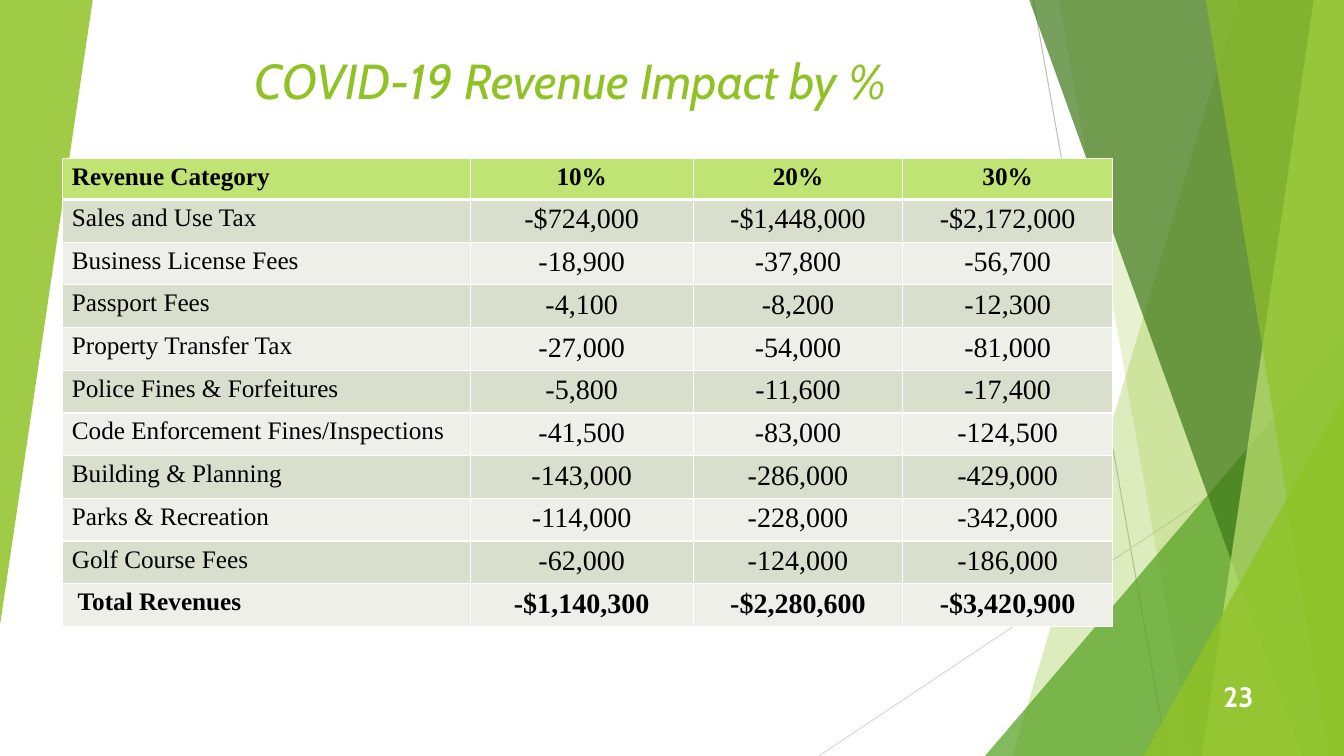
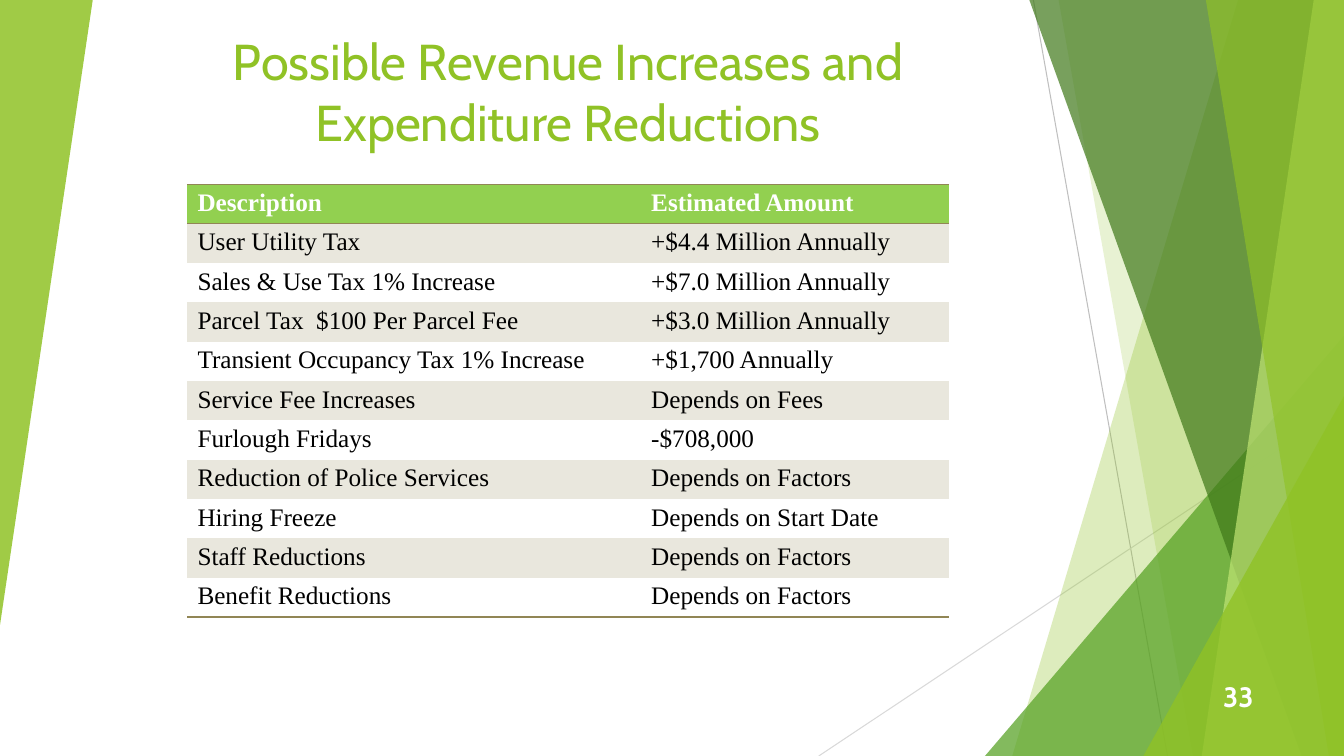
"""Two budget slides: a green faceted backdrop, a centred title, a table and a page number."""
from dataclasses import dataclass
from typing import Callable, Optional

from lxml import etree
from pptx import Presentation
from pptx import util as u
from pptx.dml.color import RGBColor
from pptx.enum import shapes, text
from pptx.oxml import ns

WIDTH, HEIGHT = u.Inches(13.33), u.Inches(7.5)
TITLE_FONT, TABLE_FONT = "Cabin", "Times New Roman"
PLAIN_TABLE = "{2D5ABB26-0587-4C30-8999-92F81FD0307C}"
COLORS = {
    "white": "FFFFFF", "black": "000000", "silver": "BFBFBF", "mist": "D9D9D9",
    "green": "90C226", "leaf": "54A021", "forest": "3F7819", "lime": "C0E474",
    "sage": "D9DECD", "pale": "EDEFE8", "grass": "92D050", "olive": "918655",
    "sand": "E9E7DD",
}


@dataclass(frozen=True)
class Area:
    """A rectangle in percent of the slide's width and height."""
    left: float
    top: float
    width: float
    height: float


@dataclass(frozen=True)
class Ray:
    """A thin straight line across the backdrop."""
    start: tuple[float, float]
    end: tuple[float, float]
    color: str


@dataclass(frozen=True)
class Blade:
    """A full-height panel from a slanted left edge to the right side."""
    top: float
    foot: float
    color: str
    opacity: int


@dataclass(frozen=True)
class Corner:
    """A right triangle tucked into a corner of the slide."""
    area: Area
    color: str
    opacity: int
    rotation: int = 0


@dataclass(frozen=True)
class Style:
    """The look of one run of text."""
    size: float
    color: str
    font: str = TABLE_FONT
    bold: bool = False
    italic: bool = False


@dataclass(frozen=True)
class TableLook:
    """Colours, rules and figure style of a table."""
    header_fill: str
    header_color: str
    bands: tuple[str, Optional[str]]
    rule_color: str
    rules: Callable[[int, int], dict[str, float]]
    inset: float
    figure_size: int = 18
    figure_align: text.PP_ALIGN = text.PP_ALIGN.LEFT
    total_row: bool = False


@dataclass(frozen=True)
class Page:
    """The content of one slide."""
    title: list[str]
    title_area: Area
    title_style: Style
    number: str
    table_corner: tuple[float, float]
    columns: list[float]
    row_height: float
    look: TableLook
    rows: list[list[str]]


def grid_rules(row: int, last: int) -> dict[str, float]:
    """Rule every edge, with a heavy line under the header."""
    return {"L": 1, "R": 1, "T": 3 if row == 1 else 1, "B": 3 if row == 0 else 1}


def open_rules(row: int, last: int) -> dict[str, float]:
    """Rule only around the header and below the last row."""
    return {0: {"T": 1, "B": 1}, last: {"B": 1}}.get(row, {})


BACKDROP = [
    Ray((76.89, 0), (86.87, 100), "silver"),
    Ray((100, 53.73), (60.92, 100), "mist"),
    Blade(92.12, 75.32, "green", 30),
    Blade(78.77, 88.75, "green", 20),
    Corner(Area(73.29, 44.4, 26.71, 55.6), "leaf", 72),
    Blade(76.59, 96.85, "forest", 70),
    Blade(97.75, 89.42, "lime", 70),
    Blade(89.72, 98.87, "green", 65),
    Corner(Area(85.07, 52.4, 14.93, 47.6), "green", 80),
    Corner(Area(0, 0, 6.9, 82.67), "green", 85, 180),
]
NUMBER_AREA = Area(88.37, 89.47, 5.63, 5.33)
NUMBER_STYLE = Style(20, "white", TITLE_FONT, bold=True)

PAGES = [
    Page(
        ["COVID-19 Revenue Impact by %"], Area(7.43, 0.53, 70.07, 14.53),
        Style(35.1, "green", TITLE_FONT, italic=True), "23",
        (4.65, 20.93), [30.34, 16.59, 15.6, 15.6], 5.45,
        TableLook("lime", "black", ("sage", "pale"), "white", grid_rules, 0.7,
                  20, text.PP_ALIGN.CENTER, True),
        [
            ["Revenue Category", "10%", "20%", "30%"],
            ["Sales and Use Tax", "-$724,000", "-$1,448,000", "-$2,172,000"],
            ["Business License Fees", "-18,900", "-37,800", "-56,700"],
            ["Passport Fees", "-4,100", "-8,200", "-12,300"],
            ["Property Transfer Tax", "-27,000", "-54,000", "-81,000"],
            ["Police Fines & Forfeitures", "-5,800", "-11,600", "-17,400"],
            ["Code Enforcement Fines/Inspections", "-41,500", "-83,000", "-124,500"],
            ["Building & Planning", "-143,000", "-286,000", "-429,000"],
            ["Parks & Recreation", "-114,000", "-228,000", "-342,000"],
            ["Golf Course Fees", "-62,000", "-124,000", "-186,000"],
            [" Total Revenues", "-$1,140,300", "-$2,280,600", "-$3,420,900"],
        ],
    ),
    Page(
        ["Possible Revenue Increases and", "Expenditure Reductions"],
        Area(5.7, 6.53, 73.14, 14.13), Style(36, "green", TITLE_FONT), "33",
        (13.95, 24.4), [33.76, 22.88], 5.04,
        TableLook("grass", "white", ("sand", None), "olive", open_rules, 0.75),
        [
            ["Description", "Estimated Amount"],
            ["User Utility Tax", "+$4.4 Million Annually"],
            ["Sales & Use Tax 1% Increase", "+$7.0 Million Annually"],
            ["Parcel Tax  $100 Per Parcel Fee", "+$3.0 Million Annually"],
            ["Transient Occupancy Tax 1% Increase", "+$1,700 Annually"],
            ["Service Fee Increases", "Depends on Fees"],
            ["Furlough Fridays", "-$708,000"],
            ["Reduction of Police Services", "Depends on Factors"],
            ["Hiring Freeze", "Depends on Start Date"],
            ["Staff Reductions", "Depends on Factors"],
            ["Benefit Reductions", "Depends on Factors"],
        ],
    ),
]


def across(share: float) -> int:
    """Turn a percentage of the slide's width into a length."""
    return round(WIDTH * share / 100)


def down(share: float) -> int:
    """Turn a percentage of the slide's height into a length."""
    return round(HEIGHT * share / 100)


def place(area: Area) -> tuple[int, int, int, int]:
    """Give an area as left, top, width and height."""
    return across(area.left), down(area.top), across(area.width), down(area.height)


def rgb(name: str) -> RGBColor:
    """Look up a named colour."""
    return RGBColor.from_string(COLORS[name])


def paint(shape, color: str, opacity: int) -> None:
    """Give a shape a see-through fill without line or shadow."""
    shape.shadow.inherit = False
    shape.line.fill.background()
    shape.fill.solid()
    shape.fill.fore_color.rgb = rgb(color)
    tint = shape.fill._xPr.find(".//" + ns.qn("a:srgbClr"))
    etree.SubElement(tint, ns.qn("a:alpha"), val=str(opacity * 1000))


def draw_ray(slide, ray: Ray) -> None:
    """Draw one thin line."""
    line = slide.shapes.add_connector(
        shapes.MSO_CONNECTOR.STRAIGHT, across(ray.start[0]), down(ray.start[1]),
        across(ray.end[0]), down(ray.end[1]))
    line.line.color.rgb = rgb(ray.color)
    line.line.width = u.Pt(0.75)
    etree.SubElement(line._element.spPr, ns.qn("a:effectLst"))


def draw_blade(slide, blade: Blade) -> None:
    """Draw one slanted panel."""
    outline = slide.shapes.build_freeform(across(blade.top), 0)
    outline.add_line_segments([(WIDTH, 0), (WIDTH, HEIGHT), (across(blade.foot), HEIGHT)])
    paint(outline.convert_to_shape(), blade.color, blade.opacity)


def draw_corner(slide, corner: Corner) -> None:
    """Draw one corner triangle."""
    triangle = slide.shapes.add_shape(
        shapes.MSO_SHAPE.ISOSCELES_TRIANGLE, *place(corner.area))
    triangle.adjustments[0] = 1
    triangle.rotation = corner.rotation
    paint(triangle, corner.color, corner.opacity)


DRAWERS = {Ray: draw_ray, Blade: draw_blade, Corner: draw_corner}


def write(frame, lines: list[str], style: Style, align: text.PP_ALIGN) -> None:
    """Fill a text frame with evenly styled paragraphs."""
    frame.text = "\n".join(lines)
    for para in frame.paragraphs:
        para.alignment = align
        for span in para.runs:
            span.font.name = style.font
            span.font.size = u.Pt(style.size)
            span.font.bold = style.bold
            span.font.italic = style.italic
            span.font.color.rgb = rgb(style.color)


def add_text(slide, area: Area, lines: list[str], style: Style,
             align: text.PP_ALIGN, anchor: text.MSO_ANCHOR) -> None:
    """Add a wrapped text box."""
    frame = slide.shapes.add_textbox(*place(area)).text_frame
    frame.word_wrap = True
    frame.vertical_anchor = anchor
    write(frame, lines, style, align)


def rule_cell(cell, widths: dict[str, float], color: str) -> None:
    """Draw the given edges of a cell."""
    props = cell._tc.get_or_add_tcPr()
    for side, width in widths.items():
        edge = etree.SubElement(props, ns.qn(f"a:ln{side}"), w=str(u.Pt(width)))
        fill = etree.SubElement(edge, ns.qn("a:solidFill"))
        etree.SubElement(fill, ns.qn("a:srgbClr"), val=COLORS[color])


def fill_cell(cell, look: TableLook, row: int, column: int, last: int, words: str) -> None:
    """Style one cell by its place in the table and write its text."""
    header = row == 0
    rule_cell(cell, look.rules(row, last), look.rule_color)
    shade = look.header_fill if header else look.bands[(row - 1) % 2]
    if shade:
        cell.fill.solid()
        cell.fill.fore_color.rgb = rgb(shade)
    else:
        cell.fill.background()
    cell.margin_left = cell.margin_right = across(look.inset)
    cell.margin_top = cell.margin_bottom = down(0.6)
    figure = column > 0
    style = Style(look.figure_size if figure and not header else 18,
                  look.header_color if header else "black",
                  bold=header or (look.total_row and row == last))
    write(cell.text_frame, [words], style,
          look.figure_align if figure else text.PP_ALIGN.LEFT)


def add_table(slide, page: Page) -> None:
    """Add the page's table."""
    count = len(page.rows)
    area = Area(*page.table_corner, sum(page.columns), page.row_height * count)
    table = slide.shapes.add_table(count, len(page.columns), *place(area)).table
    table.first_row = table.horz_banding = False
    table._tbl.tblPr.find(ns.qn("a:tableStyleId")).text = PLAIN_TABLE
    for column, share in zip(table.columns, page.columns):
        column.width = across(share)
    for row, words in enumerate(page.rows):
        table.rows[row].height = down(page.row_height)
        for column, word in enumerate(words):
            fill_cell(table.cell(row, column), page.look, row, column, count - 1, word)


def add_page(deck, page: Page) -> None:
    """Add one finished slide."""
    slide = deck.slides.add_slide(deck.slide_layouts[6])
    for part in BACKDROP:
        DRAWERS[type(part)](slide, part)
    add_text(slide, page.title_area, page.title, page.title_style,
             text.PP_ALIGN.CENTER, text.MSO_ANCHOR.BOTTOM)
    add_table(slide, page)
    add_text(slide, NUMBER_AREA, [page.number], NUMBER_STYLE,
             text.PP_ALIGN.RIGHT, text.MSO_ANCHOR.MIDDLE)


def main() -> None:
    """Build and save the deck."""
    deck = Presentation()
    deck.slide_width, deck.slide_height = WIDTH, HEIGHT
    for page in PAGES:
        add_page(deck, page)
    deck.save("out.pptx")


if __name__ == "__main__":
    main()
